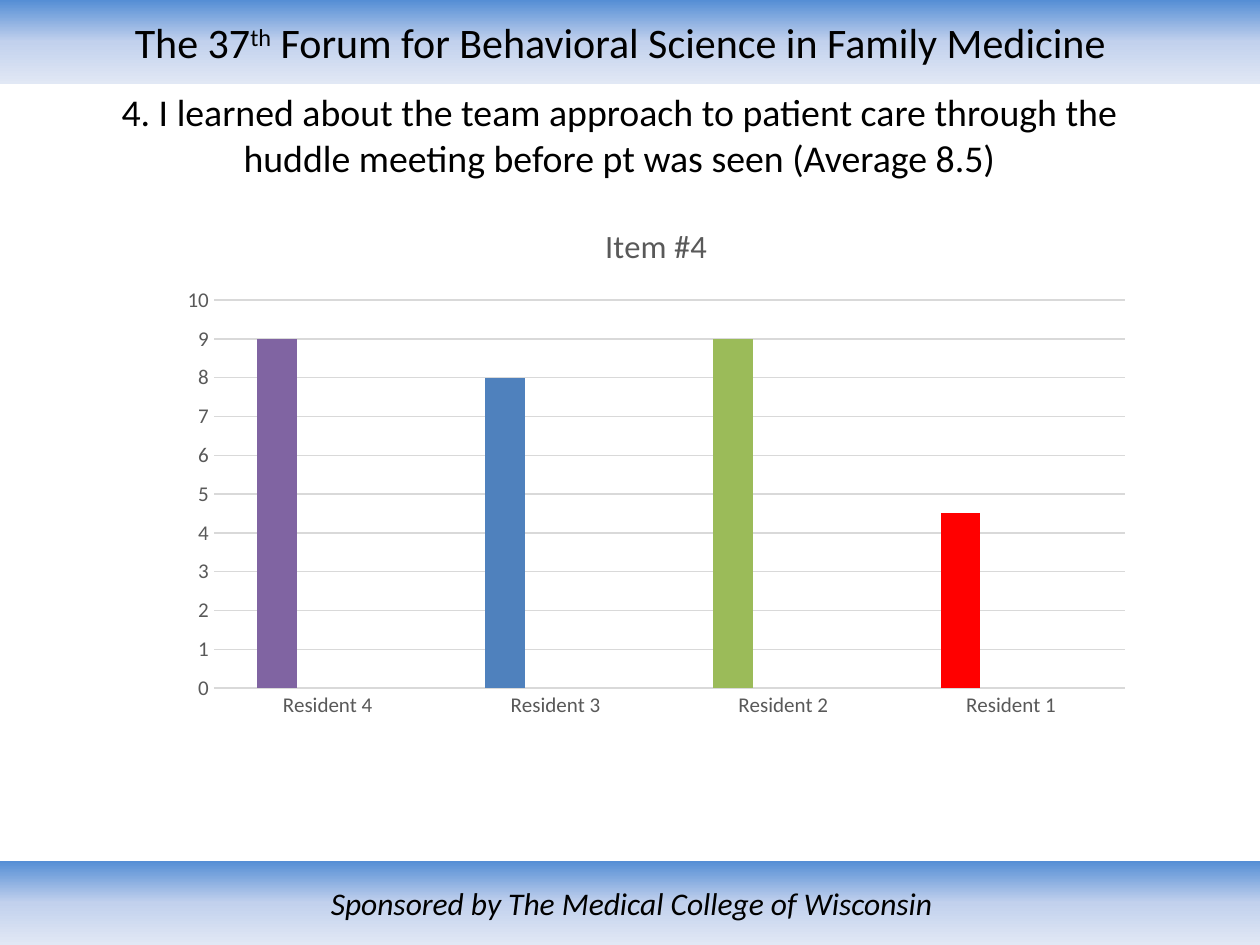
from copy import deepcopy
from pptx import Presentation
from pptx.chart import data
from pptx.dml import color
from pptx.enum import chart as kinds, shapes, text
from pptx.util import Pt

FONT = "Calibri"
SHADES = [(0, "558ED5"), (0.5, "C2D1ED"), (1, "E1E8F5")]
NAMES = ["Resident 4", "Resident 3", "Resident 2", "Resident 1"]
SCORES = [9, 8, 9, 4.5]
BARS = ["8064A2", "4F81BD", "9BBB59", "FF0000"]


def rgb(code):
    return color.RGBColor.from_string(code)


def style(font, code="000000", **form):
    for key, val in {"name": FONT, "bold": False, **form}.items():
        setattr(font, key, val)
    font.color.rgb = rgb(code)


def write(shape, runs, right=7.2, low=3.6, **form):
    frame = shape.text_frame
    sets = {"word_wrap": True, "auto_size": text.MSO_AUTO_SIZE.NONE,
            "vertical_anchor": text.MSO_ANCHOR.MIDDLE,
            "margin_left": Pt(7.2), "margin_right": Pt(right),
            "margin_top": Pt(3.6), "margin_bottom": Pt(low)}
    for key, val in sets.items():
        setattr(frame, key, val)
    para = frame.paragraphs[0]
    para.alignment = text.PP_ALIGN.CENTER
    for words, base in runs:
        run = para.add_run()
        run.text = words
        style(run.font, **form)
        if base:
            run._r.get_or_add_rPr().set("baseline", str(base * 1000))


def shade(fill):
    fill.gradient()
    fill.gradient_angle = 270
    first = fill.gradient_stops[0]._gs
    first.addnext(deepcopy(first))
    for stop, (spot, code) in zip(fill.gradient_stops, SHADES):
        stop.position = spot
        stop.color.rgb = rgb(code)


def band(slide, top, width, runs, **form):
    bar = slide.shapes.add_shape(
        shapes.MSO_SHAPE.RECTANGLE, 0, Pt(top), Pt(width), Pt(48))
    bar.shadow.inherit = False
    bar.line.fill.background()
    shade(bar.fill)
    write(bar, runs, **form)


def head(slide, words):
    box = slide.shapes.title
    spots = {"left": 30, "top": 66, "width": 648, "height": 48}
    for key, val in spots.items():
        setattr(box, key, Pt(val))
    write(box, [(words, 0)], low=30, size=Pt(21.6))


def rule(line):
    line.color.rgb = rgb("D9D9D9")
    line.width = Pt(0.75)


def graph(slide):
    feed = data.CategoryChartData()
    feed.categories = NAMES
    for num, vals in enumerate([SCORES, [None] * 4, [None] * 4], 1):
        feed.add_series(f"Series {num}", vals)
    chart = slide.shapes.add_chart(
        kinds.XL_CHART_TYPE.COLUMN_CLUSTERED,
        Pt(96), Pt(114), Pt(558), Pt(302.4), feed).chart
    style(chart.font, size=Pt(10))
    chart.has_legend = False
    label = chart.chart_title.text_frame
    label.text = "Item #4"
    style(label.paragraphs[0].runs[0].font, "595959", size=Pt(18.6))
    plot = chart.plots[0]
    plot.gap_width, plot.overlap = 219, -27
    plot.vary_by_categories = False
    for row, code in zip(plot.series, ["4F81BD", "C0504D", "9BBB59"]):
        row.format.fill.solid()
        row.format.fill.fore_color.rgb = rgb(code)
    for num, code in enumerate(BARS):
        fill = plot.series[0].points[num].format.fill
        fill.solid()
        fill.fore_color.rgb = rgb(code)
    for axis in (chart.category_axis, chart.value_axis):
        axis.major_tick_mark = kinds.XL_TICK_MARK.NONE
        axis.minor_tick_mark = kinds.XL_TICK_MARK.NONE
        style(axis.tick_labels.font, "595959", size=Pt(12))
    rule(chart.category_axis.format.line)
    axis = chart.value_axis
    axis.minimum_scale, axis.maximum_scale, axis.major_unit = 0, 10, 1
    axis.format.line.fill.background()
    rule(axis.major_gridlines.format.line)


def main():
    deck = Presentation()
    deck.slide_width, deck.slide_height = Pt(720), Pt(540)
    slide = deck.slides.add_slide(deck.slide_layouts[5])
    band(slide, 0, 720, [
        ("The 37", 0), ("th", 30),
        (" Forum for Behavioral Science in Family Medicine", 0)],
        right=18, size=Pt(24))
    band(slide, 492, 722, [
        ("Sponsored by The Medical College of Wisconsin", 0)],
        size=Pt(18), italic=True)
    head(slide, "4. I learned about the team approach to patient care through "
                "the huddle meeting before pt was seen (Average 8.5)")
    graph(slide)
    deck.save("out.pptx")


if __name__ == "__main__":
    main()
